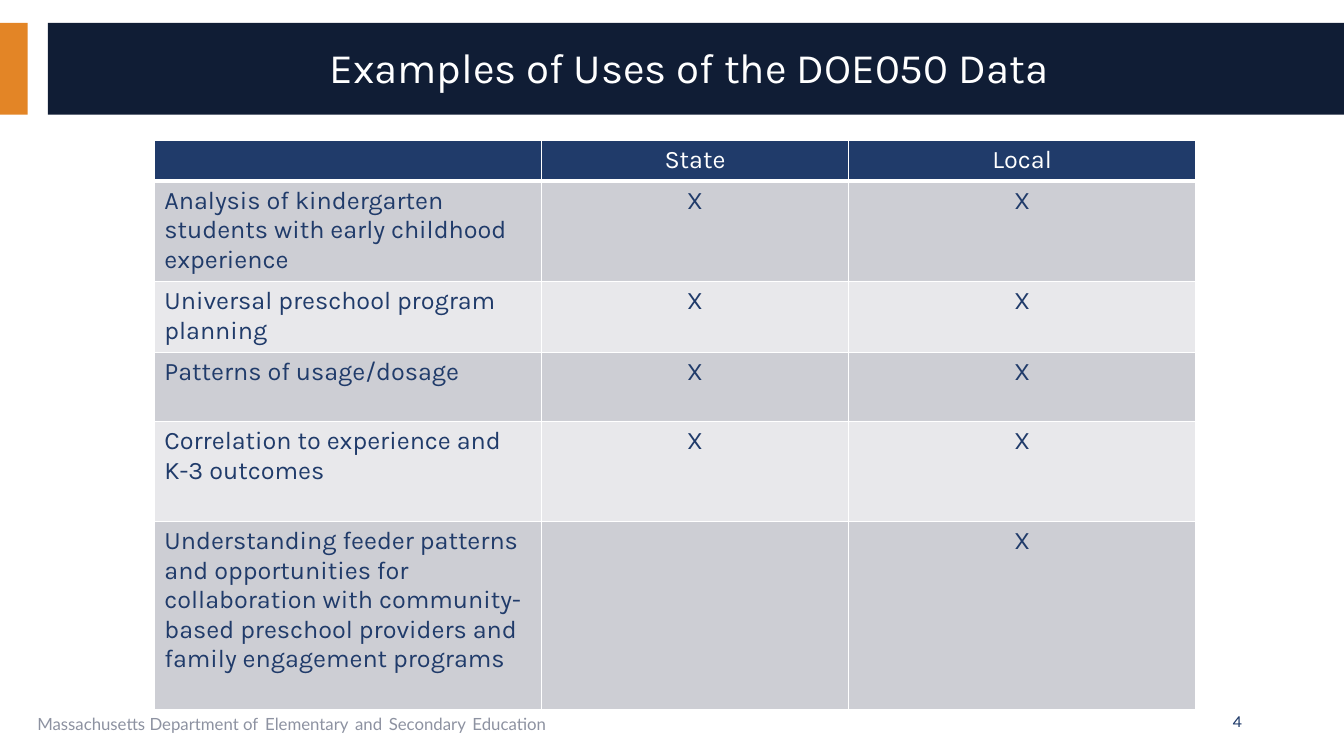
from lxml import etree
from pptx import Presentation
from pptx.dml.color import RGBColor
from pptx.enum.shapes import MSO_SHAPE
from pptx.enum.text import MSO_ANCHOR, PP_ALIGN
from pptx.oxml.ns import qn
from pptx.util import Cm, Pt

RECT = MSO_SHAPE.RECTANGLE
TOP, MIDDLE = MSO_ANCHOR.TOP, MSO_ANCHOR.MIDDLE
LEFT, CENTER, RIGHT = PP_ALIGN.LEFT, PP_ALIGN.CENTER, PP_ALIGN.RIGHT

# Content
TITLE = "Examples of Uses of the DOE050 Data"
FOOTER = ["Massachusetts Department of", "Elementary", "and", "Secondary", "Education"]
PAGE = "4"
USES = [
    ("", "State", "Local"),
    ("Analysis of kindergarten students with early childhood experience", "X", "X"),
    ("Universal preschool program planning", "X", "X"),
    ("Patterns of usage/dosage", "X", "X"),
    ("Correlation to experience and K-3 outcomes", "X", "X"),
    ("Understanding feeder patterns and opportunities for collaboration with "
     "community-based preschool providers and family engagement programs", "", "X"),
]
WIDTHS = [9.75, 7.75, 8.74]
HEIGHTS = [0.99, 2.51, 1.75, 1.75, 2.51, 4.75]

# Style
NAVY, BLUE, ORANGE, WHITE, GRAY = "101D35", "203B6A", "E38526", "FFFFFF", "8D92A1"
BANDS = ["E8E8EB", "CDCED4"]
HEAD, BODY = "Karla", "Lato"

deck = Presentation()
deck.slide_width, deck.slide_height = Cm(33.87), Cm(19.05)
slide = deck.slides.add_slide(deck.slide_layouts[6])


def paint(fill, color):
    fill.solid()
    fill.fore_color.rgb = RGBColor.from_string(color)


def add_run(para, text, size, color, font):
    run = para.add_run()
    run.text = text
    run.font.size, run.font.name = Pt(size), font
    paint(run.font.fill, color)


def add_bar(x, y, w, h, color):
    bar = slide.shapes.add_shape(RECT, Cm(x), Cm(y), Cm(w), Cm(h))
    bar.shadow.inherit = False
    paint(bar.fill, color)
    bar.line.fill.background()


def add_box(x, y, w, h, align, anchor):
    frame = slide.shapes.add_textbox(Cm(x), Cm(y), Cm(w), Cm(h)).text_frame
    frame.word_wrap = True
    frame.vertical_anchor = anchor
    para = frame.paragraphs[0]
    para.alignment = align
    return para


def add_edge(cell, side, width):
    props = cell._tc.get_or_add_tcPr()
    line = etree.SubElement(props, qn("a:ln" + side), w=str(Pt(width)))
    solid = etree.SubElement(line, qn("a:solidFill"))
    etree.SubElement(solid, qn("a:srgbClr"), val=WHITE)


# Title band
add_bar(0, 0.58, 0.7, 2.31, ORANGE)
add_bar(1.21, 0.58, 32.66, 2.31, NAVY)
title = add_box(1.57, 0.81, 31.6, 1.88, CENTER, MIDDLE)
title.line_spacing = 0.9
add_run(title, TITLE, 30, WHITE, HEAD)

# Table of uses
grid = slide.shapes.add_table(len(USES), len(WIDTHS), Cm(3.89), Cm(3.54),
                              Cm(sum(WIDTHS)), Cm(sum(HEIGHTS))).table
for col, width in zip(grid.columns, WIDTHS):
    col.width = Cm(width)
for r, (row, height) in enumerate(zip(USES, HEIGHTS)):
    grid.rows[r].height = Cm(height)
    for c, text in enumerate(row):
        cell = grid.cell(r, c)
        for side in "LRTB":
            add_edge(cell, side, 3 if r == 0 and side == "B" else 1)
        paint(cell.fill, BANDS[r % 2] if r else BLUE)
        para = cell.text_frame.paragraphs[0]
        para.alignment = CENTER if c else LEFT
        if text:
            add_run(para, text, 18, BLUE if r else WHITE, HEAD)
        else:
            cell.margin_top = cell.margin_bottom = 0

# Footer and page number
foot = add_box(0.69, 17.65, 21.44, 1.02, LEFT, TOP)
for i, word in enumerate(FOOTER):
    if i:
        add_run(foot, " ", 18, BLUE, BODY)
    add_run(foot, word, 12, GRAY, BODY)
add_run(add_box(23.93, 17.65, 7.62, 1.02, RIGHT, MIDDLE), PAGE, 12, BLUE, HEAD)

deck.save("out.pptx")
